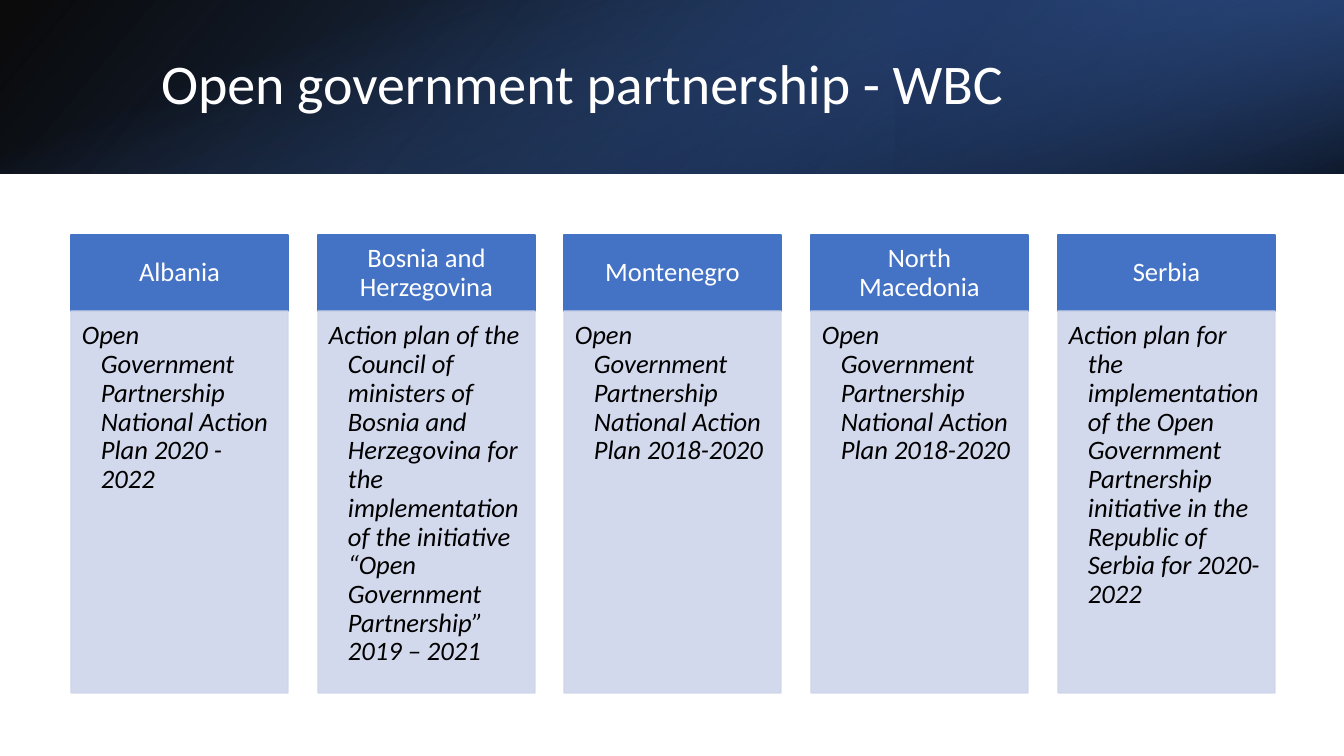
import pptx
import pptx.util
import pptx.dml.color
import pptx.enum.shapes
import pptx.enum.text
import pptx.oxml.ns
import lxml.etree

PAGE_WIDTH, PAGE_HEIGHT = 1344, 756
SCALE = 12192000 / PAGE_WIDTH
BANNER_HEIGHT = 174
FIRST_LEFT, LAST_LEFT, COLUMN_WIDTH = 71, 1058, 217
HEADER_TOP, HEADER_HEIGHT, BODY_HEIGHT = 235, 76, 382
COUNTRIES = [
    ("Albania", "Open Government Partnership National Action Plan 2020 - 2022"),
    ("Bosnia and Herzegovina",
     "Action plan of the Council of ministers of Bosnia and Herzegovina for the "
     "implementation of the initiative “Open Government Partnership” 2019 – 2021"),
    ("Montenegro", "Open Government Partnership National Action Plan 2018-2020"),
    ("North Macedonia", "Open Government Partnership National Action Plan 2018-2020"),
    ("Serbia",
     "Action plan for the implementation of the Open Government Partnership "
     "initiative in the Republic of Serbia for 2020-2022"),
]


def px(length):
    return pptx.util.Emu(round(length * SCALE))


def color(value):
    return pptx.dml.color.RGBColor.from_string(value)


def add_child(parent, tag, **attributes):
    child = lxml.etree.SubElement(parent, pptx.oxml.ns.qn(tag))
    for name, value in attributes.items():
        child.set(name, str(value))
    return child


def add_rectangle(page, left, top, width, height):
    shape = page.shapes.add_shape(
        pptx.enum.shapes.MSO_SHAPE.RECTANGLE, px(left), px(top), px(width), px(height))
    shape.shadow.inherit = False
    return shape


def add_gradient(page, left, top, width, height, stops, angle, rotation=0, flip=False):
    shape = add_rectangle(page, left, top, width, height)
    shape.line.fill.background()
    shape.rotation = rotation
    shape.fill.gradient()
    properties = shape.element.spPr
    if flip:
        properties.find(pptx.oxml.ns.qn("a:xfrm")).set("flipH", "1")
    gradient = properties.find(pptx.oxml.ns.qn("a:gradFill"))
    for child in list(gradient):
        gradient.remove(child)
    gradient.set("rotWithShape", "1")
    stop_list = add_child(gradient, "a:gsLst")
    for position, value, opacity in stops:
        stop = add_child(stop_list, "a:gs", pos=position * 1000)
        add_child(add_child(stop, "a:srgbClr", val=value), "a:alpha", val=opacity * 1000)
    add_child(gradient, "a:lin", ang=angle * 60000, scaled=0)


def add_panel(page, left, top, width, height, fill, opacity=100):
    shape = add_rectangle(page, left, top, width, height)
    shape.fill.solid()
    shape.fill.fore_color.rgb = color(fill)
    shape.line.color.rgb = color(fill)
    shape.line.width = pptx.util.Pt(1)
    if opacity < 100:
        for tone in shape.element.spPr.iter(pptx.oxml.ns.qn("a:srgbClr")):
            add_child(tone, "a:alpha", val=opacity * 1000)
    return shape


def write_text(shape, text, size=19, tone="FFFFFF", italic=False, align="LEFT",
               anchor="MIDDLE", insets=(10, 5, 10, 5), hanging=0):
    frame = shape.text_frame
    frame.word_wrap = True
    frame.vertical_anchor = pptx.enum.text.MSO_ANCHOR[anchor]
    frame.margin_left, frame.margin_top, frame.margin_right, frame.margin_bottom = map(px, insets)
    para = frame.paragraphs[0]
    para.alignment = pptx.enum.text.PP_ALIGN[align]
    para.line_spacing = 0.9
    if hanging:
        indents = para._p.get_or_add_pPr()
        indents.set("marL", str(px(hanging)))
        indents.set("indent", str(-px(hanging)))
    span = para.add_run()
    span.text = text
    span.font.name = "Calibri"
    span.font.size = pptx.util.Pt(size)
    span.font.italic = italic
    span.font.color.rgb = color(tone)


def add_banner(page):
    add_gradient(page, 0, 0, PAGE_WIDTH, BANNER_HEIGHT,
                 [(0, "000000", 96), (100, "2F5597", 100)], 140, flip=True)
    add_gradient(page, 896, 0, 448, BANNER_HEIGHT,
                 [(19, "203864", 68), (100, "4472C4", 79)], 320, rotation=180, flip=True)
    offset = (PAGE_WIDTH - BANNER_HEIGHT) // 2
    add_gradient(page, offset, -offset, BANNER_HEIGHT, PAGE_WIDTH,
                 [(23, "4472C4", 0), (99, "000000", 74)], 340, rotation=90)
    title = page.shapes.add_textbox(px(151), px(38), px(1107), px(97))
    write_text(title, "Open government partnership - WBC", size=40)


def add_country(page, left, country, plan):
    header = add_panel(page, left, HEADER_TOP, COLUMN_WIDTH, HEADER_HEIGHT, "4472C4")
    write_text(header, country, align="CENTER", insets=(15, 8, 15, 8))
    body = add_panel(page, left, HEADER_TOP + HEADER_HEIGHT, COLUMN_WIDTH, BODY_HEIGHT,
                     "CFD5EA", opacity=90)
    write_text(body, plan, tone="000000", italic=True, anchor="TOP",
               insets=(11, 11, 15, 17), hanging=19)


def main():
    deck = pptx.Presentation()
    deck.slide_width, deck.slide_height = px(PAGE_WIDTH), px(PAGE_HEIGHT)
    page = deck.slides.add_slide(deck.slide_layouts[6])
    add_banner(page)
    pitch = (LAST_LEFT - FIRST_LEFT) / (len(COUNTRIES) - 1)
    for index, (country, plan) in enumerate(COUNTRIES):
        add_country(page, round(FIRST_LEFT + index * pitch), country, plan)
    deck.save("out.pptx")


if __name__ == "__main__":
    main()
